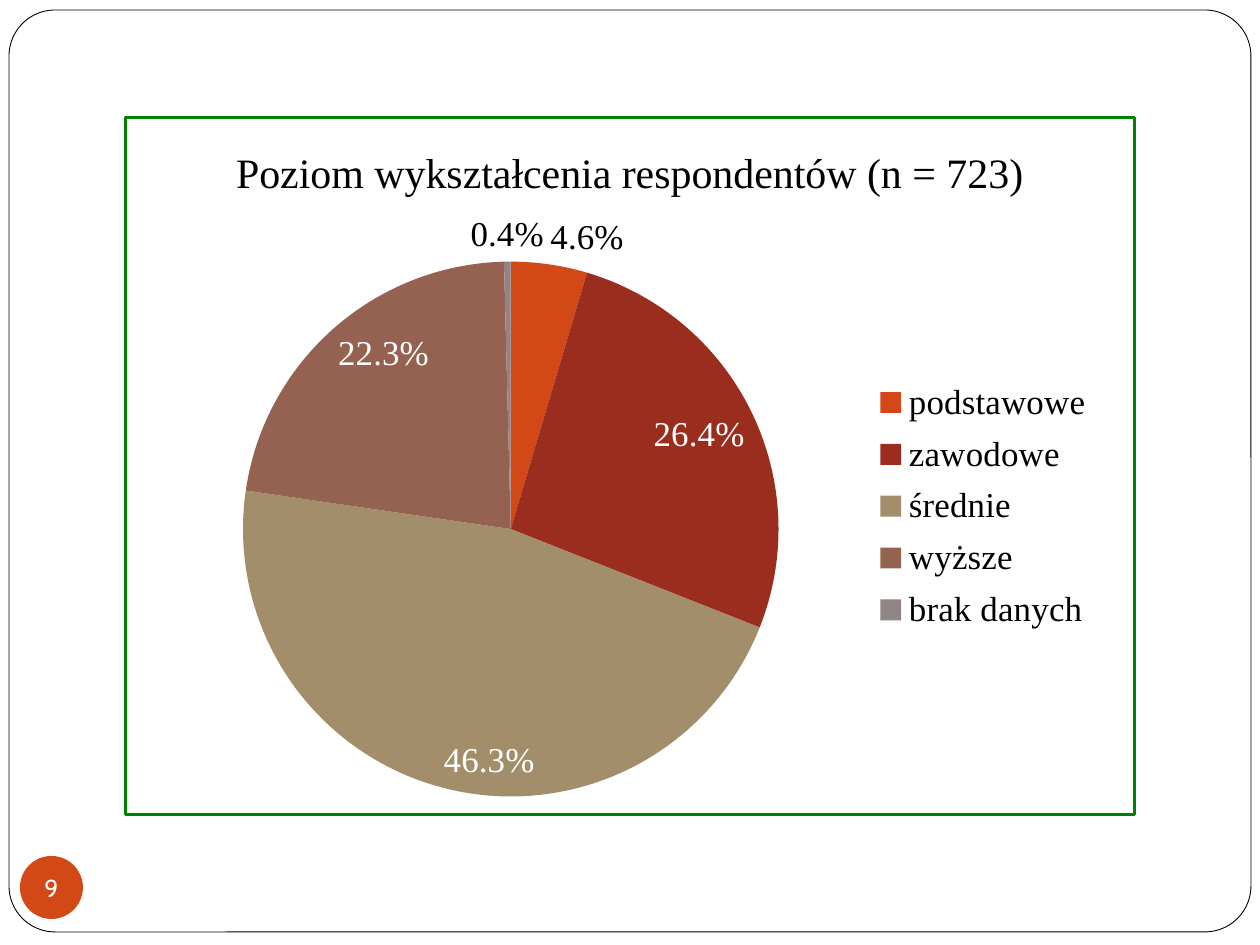
"""Builds a slide with a pie chart of respondents' education levels."""
from lxml import etree
from pptx import Presentation
from pptx.chart.data import CategoryChartData
from pptx.dml.color import RGBColor
from pptx.enum.chart import XL_CHART_TYPE, XL_LABEL_POSITION, XL_LEGEND_POSITION
from pptx.enum.shapes import MSO_SHAPE
from pptx.enum.text import MSO_ANCHOR, PP_ALIGN
from pptx.oxml import parse_xml
from pptx.oxml.ns import nsdecls, qn
from pptx.util import Emu, Pt

BLACK = RGBColor(0x00, 0x00, 0x00)
WHITE = RGBColor(0xFF, 0xFF, 0xFF)
ORANGE = RGBColor(0xD3, 0x48, 0x17)
RED = RGBColor(0x9B, 0x2D, 0x1F)
SAND = RGBColor(0xA2, 0x8E, 0x6A)
BROWN = RGBColor(0x95, 0x62, 0x51)
GRAY = RGBColor(0x91, 0x84, 0x85)
GREEN = RGBColor(0x00, 0x80, 0x00)

TITLE = "Poziom wykształcenia respondentów (n = 723)"
LEVELS = [
    ("podstawowe", 0.046, ORANGE),
    ("zawodowe", 0.264, RED),
    ("średnie", 0.463, SAND),
    ("wyższe", 0.223, BROWN),
    ("brak danych", 0.004, GRAY),
]
SMALL_SHARE = 0.05
PERCENT = "0.0%"
PAGE = "9"
FONT = "Times New Roman"

SLIDE = (1260, 945)
FRAME = (9, 10, 1242, 922)
BADGE = (20, 856, 63, 63)
CHART = (124, 116, 1012, 700)
PIE = (242, 261, 537, 537)
LEGEND = (873, 370, 222, 273)


def px(n):
    return Emu(round(n * 914400 / 126))


def box(rect):
    return [px(n) for n in rect]


def add_shape(slide, kind, rect, fill):
    sp = slide.shapes.add_shape(kind, *box(rect))
    sp.shadow.inherit = False
    sp.fill.solid()
    sp.fill.fore_color.rgb = fill
    return sp


def style(font, size, color):
    font.name = FONT
    font.size = Pt(size)
    font.bold = False
    font.color.rgb = color


def chart_layout(rect, target=""):
    """Return a manual layout that places rect inside the chart."""
    left, top, width, height = CHART
    x, y, w, h = rect
    fractions = {"x": (x - left) / width, "y": (y - top) / height,
                 "w": w / width, "h": h / height}
    layout = etree.Element(qn("c:layout"))
    manual = etree.SubElement(layout, qn("c:manualLayout"))
    settings = [("layoutTarget", target)] if target else []
    settings += [("xMode", "edge"), ("yMode", "edge")]
    settings += [(k, f"{v:.4f}") for k, v in fractions.items()]
    for tag, val in settings:
        etree.SubElement(manual, qn(f"c:{tag}")).set("val", val)
    return layout


def add_border(chart, color, width):
    chart.element.find(qn("c:chart")).addnext(parse_xml(
        f'<c:spPr {nsdecls("c", "a")}><a:noFill/><a:ln w="{Pt(width)}">'
        f'<a:solidFill><a:srgbClr val="{color}"/></a:solidFill></a:ln></c:spPr>'))


def add_pie(slide):
    data = CategoryChartData(number_format=PERCENT)
    data.categories = [name for name, _, _ in LEVELS]
    data.add_series("Series 1", [share for _, share, _ in LEVELS])
    chart = slide.shapes.add_chart(XL_CHART_TYPE.PIE, *box(CHART), data).chart
    style(chart.font, 11, BLACK)
    add_border(chart, GREEN, 1.5)

    chart.has_title = True
    p = chart.chart_title.text_frame.paragraphs[0]
    p.text = TITLE
    style(p.font, 24, BLACK)
    chart.chart_title.include_in_layout = False

    chart.has_legend = True
    legend = chart.legend
    legend.position = XL_LEGEND_POSITION.RIGHT
    legend.include_in_layout = False
    style(legend.font, 20, BLACK)
    chart.element.find(".//" + qn("c:legendPos")).addnext(chart_layout(LEGEND))

    plot_area = chart.element.find(".//" + qn("c:plotArea"))
    for old in plot_area.findall(qn("c:layout")):
        plot_area.remove(old)
    plot_area.insert(0, chart_layout(PIE, "inner"))

    plot = chart.plots[0]
    plot.vary_by_categories = True
    series = plot.series[0]
    labels = series.data_labels
    labels.show_value = True
    labels.number_format = PERCENT
    labels.number_format_is_linked = False
    labels.position = XL_LABEL_POSITION.INSIDE_END
    style(labels.font, 20, WHITE)
    for i, (_, share, color) in enumerate(LEVELS):
        point = series.points[i]
        point.format.fill.solid()
        point.format.fill.fore_color.rgb = color
        if share < SMALL_SHARE:
            style(point.data_label.font, 20, BLACK)
            point.data_label.position = XL_LABEL_POSITION.OUTSIDE_END


def main():
    prs = Presentation()
    prs.slide_width, prs.slide_height = box(SLIDE)
    slide = prs.slides.add_slide(prs.slide_layouts[6])

    frame = add_shape(slide, MSO_SHAPE.ROUNDED_RECTANGLE, FRAME, WHITE)
    frame.adjustments[0] = 0.05
    frame.line.color.rgb = BLACK
    frame.line.width = Pt(0.5)

    badge = add_shape(slide, MSO_SHAPE.OVAL, BADGE, ORANGE)
    badge.line.fill.background()
    tf = badge.text_frame
    tf.word_wrap = False
    tf.vertical_anchor = MSO_ANCHOR.MIDDLE
    tf.margin_left = tf.margin_right = tf.margin_top = tf.margin_bottom = 0
    p = tf.paragraphs[0]
    p.text = PAGE
    p.alignment = PP_ALIGN.CENTER
    p.font.name = "Cabin"
    p.font.size = Pt(14)
    p.font.color.rgb = WHITE

    add_pie(slide)
    prs.save("out.pptx")


if __name__ == "__main__":
    main()
